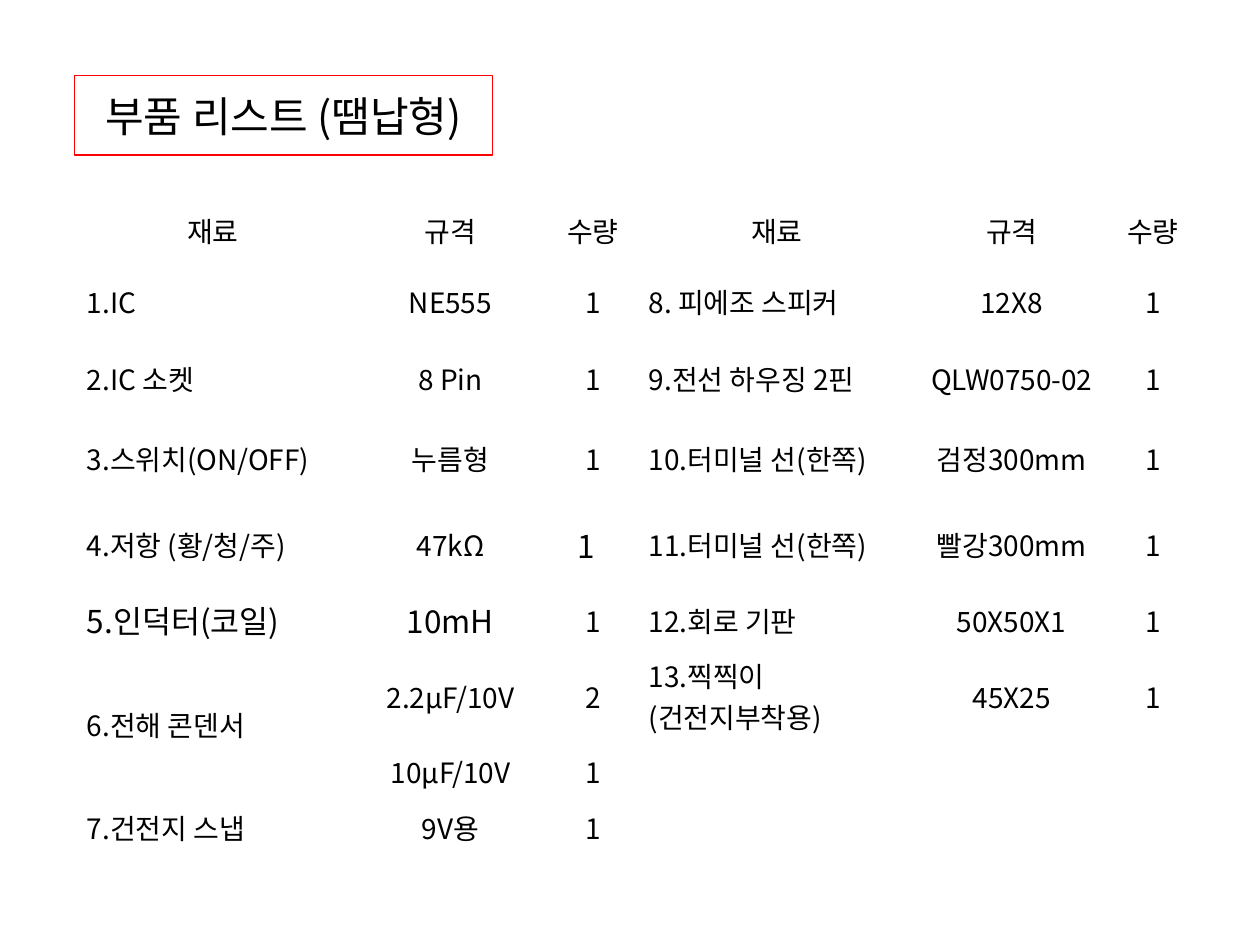
from lxml import etree
from pptx import Presentation
from pptx.dml.color import RGBColor
from pptx.enum.shapes import MSO_SHAPE
from pptx.enum.text import MSO_ANCHOR, PP_ALIGN
from pptx.oxml.ns import qn
from pptx.util import Inches, Pt

LEFT, CENTER = PP_ALIGN.LEFT, PP_ALIGN.CENTER
MIDDLE = MSO_ANCHOR.MIDDLE
RECT = MSO_SHAPE.RECTANGLE
FONT = "Noto Sans CJK KR"
COLORS = {"text": "000000", "frame": "FF0000"}

HEADS = ["재료", "규격", "수량"]
PARTS = [
    ["1.IC", "NE555", "1", "8. 피에조 스피커", "12X8", "1"],
    ["2.IC 소켓", "8 Pin", "1", "9.전선 하우징 2핀", "QLW0750-02", "1"],
    ["3.스위치(ON/OFF)", "누름형", "1", "10.터미널 선(한쪽)", "검정300mm", "1"],
    ["4.저항 (황/청/주)", "47kΩ", "1", "11.터미널 선(한쪽)", "빨강300mm", "1"],
    ["5.인덕터(코일)", "10mH", "1", "12.회로 기판", "50X50X1", "1"],
    ["6.전해 콘덴서", "2.2μF/10V", "2", "13.찍찍이(건전지부착용)", "45X25", "1"],
    ["", "10μF/10V", "1", "", "", ""],
    ["7.건전지 스냅", "9V용", "1", "", "", ""],
]
WIDTHS = [2.2, 1.57, 0.69, 2.23, 1.5, 0.74]
HEIGHTS = [0.55, 0.58, 0.64, 0.63, 0.32, 0.43, 0.6, 0.45, 0.45]
NAMES = (0, 3)
LARGE = {(4, 2), (5, 0), (5, 1)}
INDENT = (4, 2)


def write(frame, text, size=16, align=CENTER, color="text"):
    para = frame.paragraphs[0]
    para.alignment = align
    run = para.add_run()
    run.text = text
    run.font.size = Pt(size)
    run.font.name = FONT
    run.font.color.rgb = RGBColor.from_string(COLORS[color])
    etree.SubElement(run.font._element, qn("a:ea"), typeface=FONT)


class Deck:
    def __init__(self):
        self.show = Presentation()
        self.show.slide_width = Inches(10)
        self.show.slide_height = Inches(7.5)
        self.slide = self.show.slides.add_slide(self.show.slide_layouts[6])

    def title(self, text, *box):
        shape = self.slide.shapes.add_shape(RECT, *map(Inches, box))
        shape.shadow.inherit = False
        shape.fill.background()
        shape.line.color.rgb = RGBColor.from_string(COLORS["frame"])
        shape.line.width = Pt(0.75)
        frame = shape.text_frame
        frame.word_wrap = False
        frame.vertical_anchor = MIDDLE
        write(frame, text, size=24)

    def table(self, rows, left, top):
        box = map(Inches, (left, top, sum(WIDTHS), sum(HEIGHTS)))
        grid = self.slide.shapes.add_table(len(rows), len(WIDTHS), *box).table
        grid.first_row = grid.horz_banding = False
        for col, width in zip(grid.columns, WIDTHS):
            col.width = Inches(width)
        for row, height in zip(grid.rows, HEIGHTS):
            row.height = Inches(height)
        for y, row in enumerate(rows):
            for x, text in enumerate(row):
                self.cell(grid.cell(y, x), text, y, x)
        grid.cell(6, 0).merge(grid.cell(7, 0))

    def cell(self, cell, text, y, x):
        cell.fill.background()
        cell.vertical_anchor = MIDDLE
        if (y, x) == INDENT:
            cell.margin_left = Inches(0.22)
        if text:
            plain = (y and x in NAMES) or (y, x) == INDENT
            write(cell.text_frame, text, size=18 if (y, x) in LARGE else 16,
                  align=LEFT if plain else CENTER)


def main():
    deck = Deck()
    deck.title("부품 리스트 (땜납형)", 0.59, 0.6, 3.32, 0.63)
    deck.table([HEADS * 2] + PARTS, 0.59, 1.55)
    deck.show.save("out.pptx")


if __name__ == "__main__":
    main()
